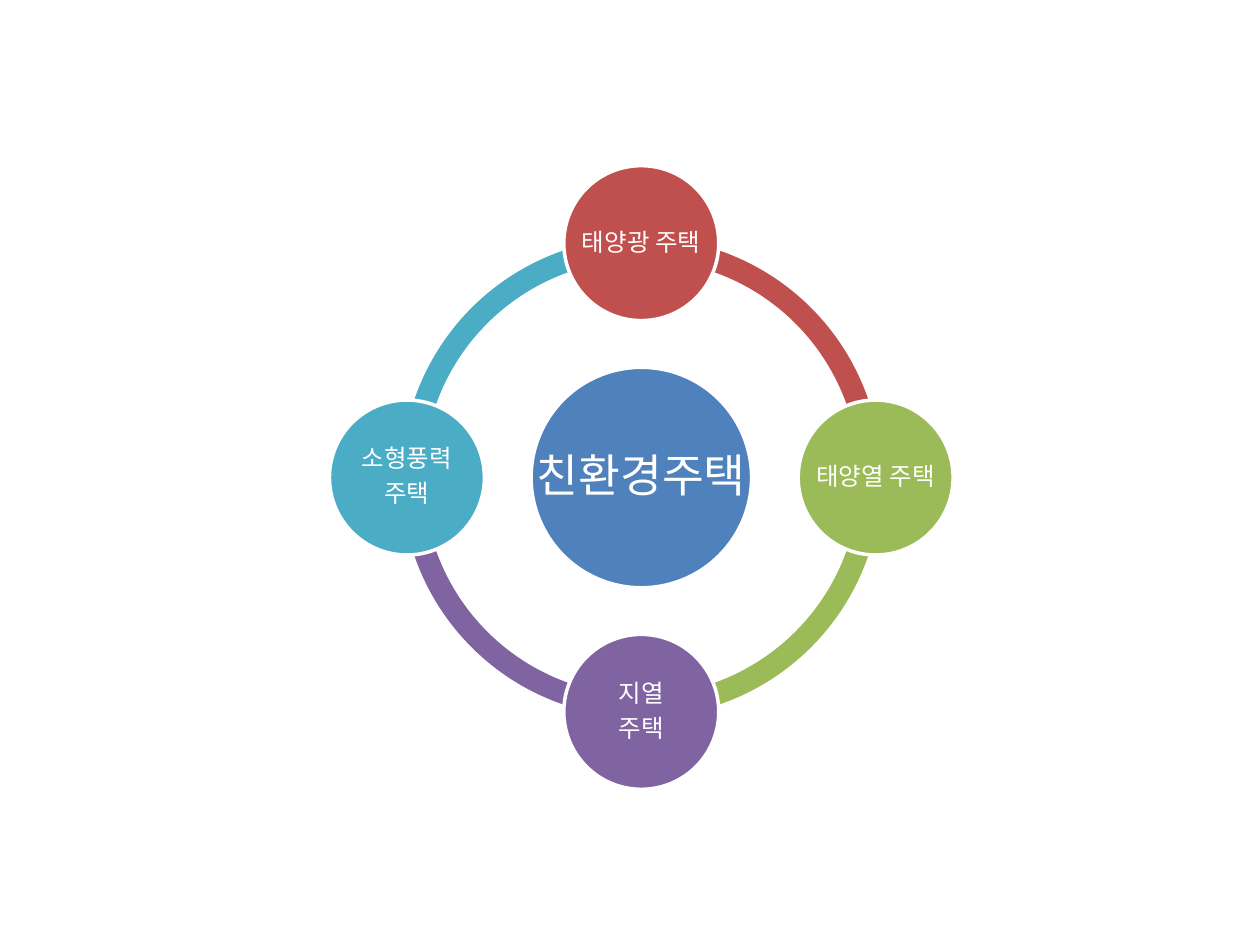
import pptx
import pptx.util
import pptx.dml.color
import pptx.enum.shapes
import pptx.enum.text

Inches = pptx.util.Inches
Pt = pptx.util.Pt
SHAPE = pptx.enum.shapes.MSO_SHAPE
FONT = "Noto Sans CJK KR"
WHITE = "FFFFFF"

# Centre of the cycle, and distance from it to each outer circle
MID_X, MID_Y = 5.09, 3.79
REACH = 1.86
RING, HUB, NODE = 3.81, 1.75, 1.23

# Clockwise from the top: lines, colour, direction, start and end of arc
NODES = [
    (["태양광 주택"], "C0504D", (0, -1), (162, 0)),
    (["태양열 주택"], "9BBB59", (1, 0), (0, 54)),
    (["지열", "주택"], "8064A2", (0, 1), (54, 108)),
    (["소형풍력", "주택"], "4BACC6", (-1, 0), (108, 162)),
]


def color(code):
    return pptx.dml.color.RGBColor.from_string(code)


def add_round(slide, kind, x, y, size, fill):
    """Add a filled square-bounded shape centred on x, y."""
    shape = slide.shapes.add_shape(
        kind, Inches(x - size / 2), Inches(y - size / 2),
        Inches(size), Inches(size))
    shape.shadow.inherit = False
    shape.fill.solid()
    shape.fill.fore_color.rgb = color(fill)
    return shape


def add_arc(slide, fill, start, end):
    arc = add_round(slide, SHAPE.BLOCK_ARC, MID_X, MID_Y, RING, fill)
    arc.line.fill.background()
    for i, value in enumerate((start, end, 0.046)):
        arc.adjustments[i] = value


def add_disc(slide, lines, x, y, size, fill, points, inset):
    disc = add_round(slide, SHAPE.OVAL, x, y, size, fill)
    disc.line.color.rgb = color(WHITE)
    disc.line.width = Pt(2)
    frame = disc.text_frame
    frame.word_wrap = False
    frame.vertical_anchor = pptx.enum.text.MSO_ANCHOR.MIDDLE
    frame.margin_left = frame.margin_right = Inches(inset)
    frame.margin_top = frame.margin_bottom = Inches(inset)
    frame.text = "\n".join(lines)
    for para in frame.paragraphs:
        para.alignment = pptx.enum.text.PP_ALIGN.CENTER
        para.line_spacing = 0.9
        para.space_after = Pt(points * 0.35)
        para.font.size = Pt(points)
        para.font.name = FONT
        para.font.color.rgb = color(WHITE)


def main():
    deck = pptx.Presentation()
    deck.slide_width, deck.slide_height = Inches(10), Inches(7.5)
    slide = deck.slides.add_slide(deck.slide_layouts[6])

    # Ring segments lie behind the circles
    for _, fill, _, (start, end) in reversed(NODES):
        add_arc(slide, fill, start, end)

    # Hub, then the four house types around it
    add_disc(slide, ["친환경주택"], MID_X, MID_Y, HUB, "4F81BD", 26, 0.04)
    for lines, fill, (dx, dy), _ in NODES:
        add_disc(slide, lines, MID_X + dx * REACH, MID_Y + dy * REACH,
                 NODE, fill, 14, 0.02)

    deck.save("out.pptx")


if __name__ == "__main__":
    main()
